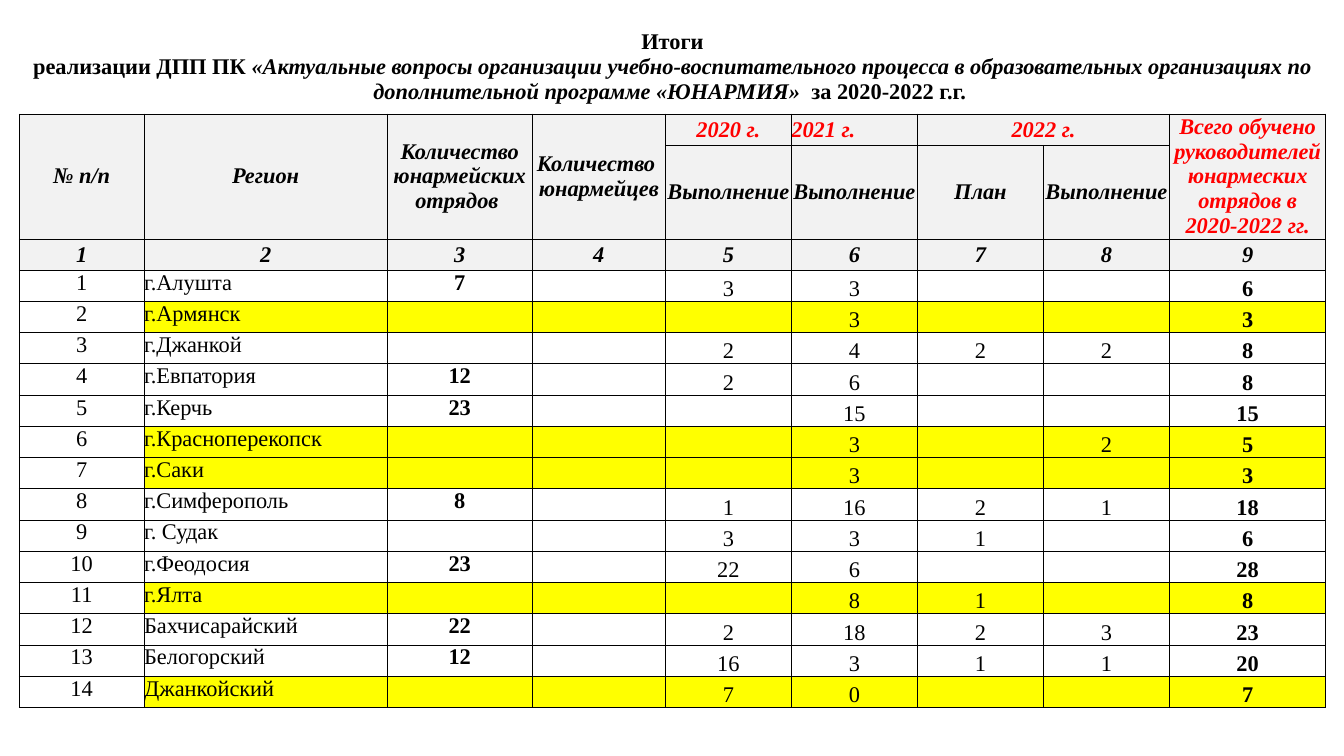
"""Build the slide with the table of training results by region."""
from lxml import etree
from pptx import Presentation, util as u
from pptx.dml.color import RGBColor
from pptx.enum import text as t
from pptx.oxml.ns import qn

HUE = {"ink": "000000", "red": "FF0000", "head": "F2F2F2", "mark": "FFFF00"}
FONT, SIZE = "Times New Roman", 16
WIDE, HIGH = 13.33, 7.5
LEFT, TOP = 0.19, 0.2
COLS = [1.24, 2.41, 1.44, 1.32] + [1.25] * 4 + [1.55]
UNIT = 0.31
ROWS = [3, 1, 3] + [1] * 15
MID, LOW, HIGHEST = t.MSO_ANCHOR.MIDDLE, t.MSO_ANCHOR.BOTTOM, t.MSO_ANCHOR.TOP
MERGE = [(0, 0, 0, 8), (1, 6, 1, 7)] + [(1, c, 2, c) for c in (0, 1, 2, 3, 8)]

TITLE = [
    ("Итоги\vреализации ДПП ПК ", False),
    ("«Актуальные вопросы организации учебно-воспитательного процесса "
     "в образовательных организациях по дополнительной программе «ЮНАРМИЯ» ", True),
    (" за 2020-2022 г.г. ", False),
]
HEADS = [
    ["№ п/п", "Регион", "Количество юнармейских отрядов ", "Количество  юнармейцев",
     "2020 г.", "2021 г.", "2022 г.", "",
     "Всего обучено руководителей юнармеских отрядов в 2020-2022 гг."],
    ["", "", "", "", "Выполнение", "Выполнение", "План", "Выполнение ", ""],
    [str(n) for n in range(1, 10)],
]
DATA = [
    ("г.Алушта", "7", "", "3", "3", "", "", "6"),
    ("г.Армянск", "", "", "", "3", "", "", "3"),
    ("г.Джанкой", "", "", "2", "4", "2", "2", "8"),
    ("г.Евпатория", "12", "", "2", "6", "", "", "8"),
    ("г.Керчь", "23", "", "", "15", "", "", "15"),
    ("г.Красноперекопск", "", "", "", "3", "", "2", "5"),
    ("г.Саки", "", "", "", "3", "", "", "3"),
    ("г.Симферополь", "8", "", "1", "16", "2", "1", "18"),
    ("г. Судак", "", "", "3", "3", "1", "", "6"),
    ("г.Феодосия", "23", "", "22", "6", "", "", "28"),
    ("г.Ялта", "", "", "", "8", "1", "", "8"),
    ("Бахчисарайский", "22", "", "2", "18", "2", "3", "23"),
    ("Белогорский", "12", "", "16", "3", "1", "1", "20"),
    ("Джанкойский", "", "", "7", "0", "", "", "7"),
]
MARKED = {2, 6, 7, 11, 14}


def edge(cell, sides):
    """Draw thin lines on the given sides and clear the others."""
    props = cell._tc.get_or_add_tcPr()
    for side in "LRTB":
        line = etree.SubElement(props, qn(f"a:ln{side}"), w=str(u.Pt(0.5)))
        if side in sides:
            fill = etree.SubElement(line, qn("a:solidFill"))
            etree.SubElement(fill, qn("a:srgbClr"), val=HUE["ink"])
        else:
            etree.SubElement(line, qn("a:noFill"))


def frame(cell, fill=None, sides="LRTB", anchor=MID):
    """Set the lines, fill, margins and anchor of a cell."""
    edge(cell, sides)
    if fill:
        cell.fill.solid()
        cell.fill.fore_color.rgb = RGBColor.from_string(HUE[fill])
    else:
        cell.fill.background()
    cell.margin_left = cell.margin_right = cell.margin_top = cell.margin_bottom = 0
    cell.vertical_anchor = anchor


def style(run, bold=False, slant=False, hue="ink"):
    """Format one run."""
    font = run.font
    font.name, font.size = FONT, u.Pt(SIZE)
    font.bold, font.italic = bold, slant
    font.color.rgb = RGBColor.from_string(HUE[hue])


def write(cell, words, left=False, **look):
    """Put one paragraph of text into a cell."""
    para = cell.text_frame.paragraphs[0]
    para.alignment = t.PP_ALIGN.LEFT if left else t.PP_ALIGN.CENTER
    if words:
        para.text = words
        for run in para.runs:
            style(run, **look)
    else:
        para._p.get_or_add_endParaRPr().set("sz", str(SIZE * 100))


def title(grid):
    """Fill the title row."""
    for col in range(len(COLS)):
        frame(grid.cell(0, col), sides="B")
    para = grid.cell(0, 0).text_frame.paragraphs[0]
    para.alignment = t.PP_ALIGN.CENTER
    for words, slant in TITLE:
        for step, part in enumerate(words.split("\v")):
            if step:
                para.add_line_break()
            run = para.add_run()
            run.text = part
            style(run, bold=True, slant=slant)


def heads(grid):
    """Fill the heading rows."""
    for row, names in enumerate(HEADS, 1):
        for col, name in enumerate(names):
            cell = grid.cell(row, col)
            frame(cell, "head")
            hue = "red" if row == 1 and col > 3 else "ink"
            write(cell, name, left=name == "2021 г.", bold=True, slant=True, hue=hue)


def body(grid):
    """Fill the rows of regions."""
    for num, values in enumerate(DATA, 1):
        for col, value in enumerate((str(num), *values)):
            cell = grid.cell(num + len(HEADS), col)
            fill = "mark" if num in MARKED and col else None
            frame(cell, fill, anchor=HIGHEST if col < 3 else LOW)
            write(cell, value, left=col == 1, bold=col in (2, 8))


def table(slide):
    """Add the table with its column and row sizes and merged cells."""
    shape = slide.shapes.add_table(
        len(ROWS), len(COLS), u.Inches(LEFT), u.Inches(TOP),
        u.Inches(sum(COLS)), u.Inches(UNIT * sum(ROWS)))
    grid = shape.table
    grid.first_row = grid.horz_banding = False
    for col, size in zip(grid.columns, COLS):
        col.width = u.Inches(size)
    for row, size in zip(grid.rows, ROWS):
        row.height = u.Inches(size * UNIT)
    for top, left, low, right in MERGE:
        grid.cell(top, left).merge(grid.cell(low, right))
    return grid


def main():
    """Build and save the slide."""
    deck = Presentation()
    deck.slide_width, deck.slide_height = u.Inches(WIDE), u.Inches(HIGH)
    grid = table(deck.slides.add_slide(deck.slide_layouts[6]))
    title(grid)
    heads(grid)
    body(grid)
    deck.save("out.pptx")


if __name__ == "__main__":
    main()
